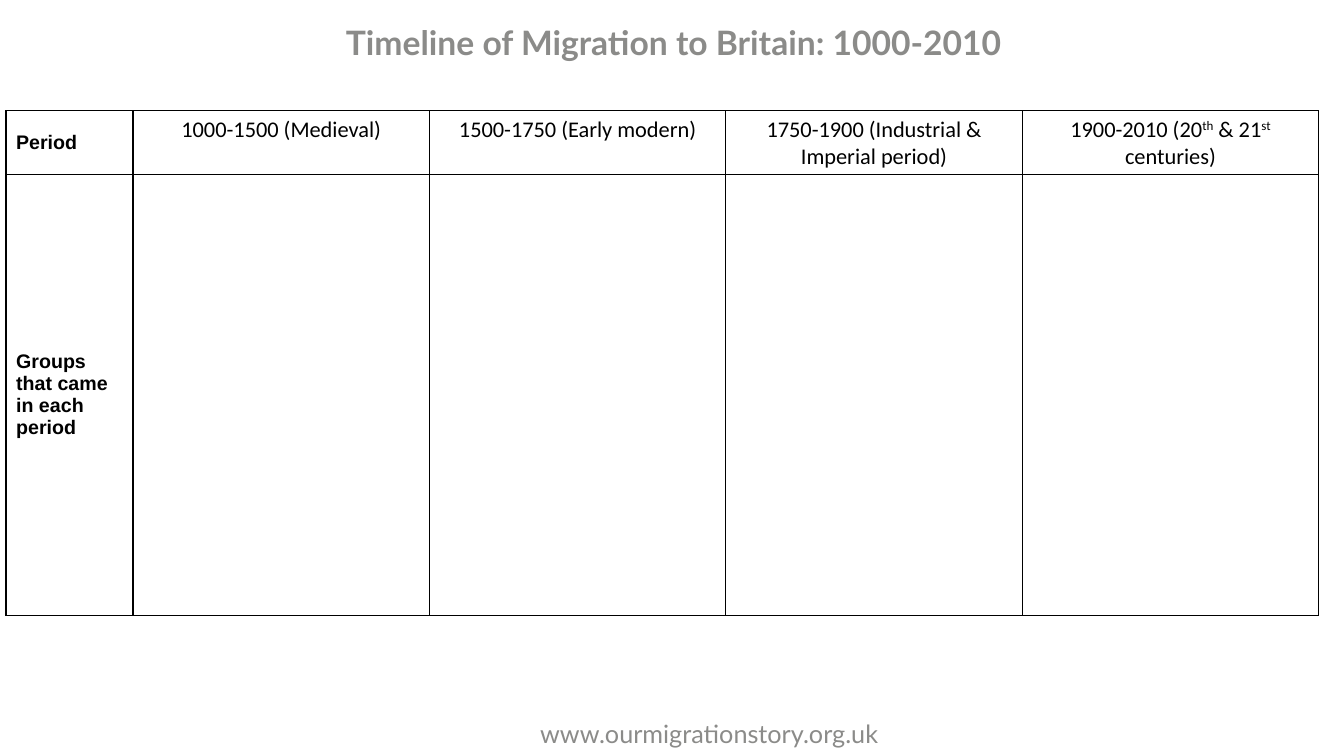
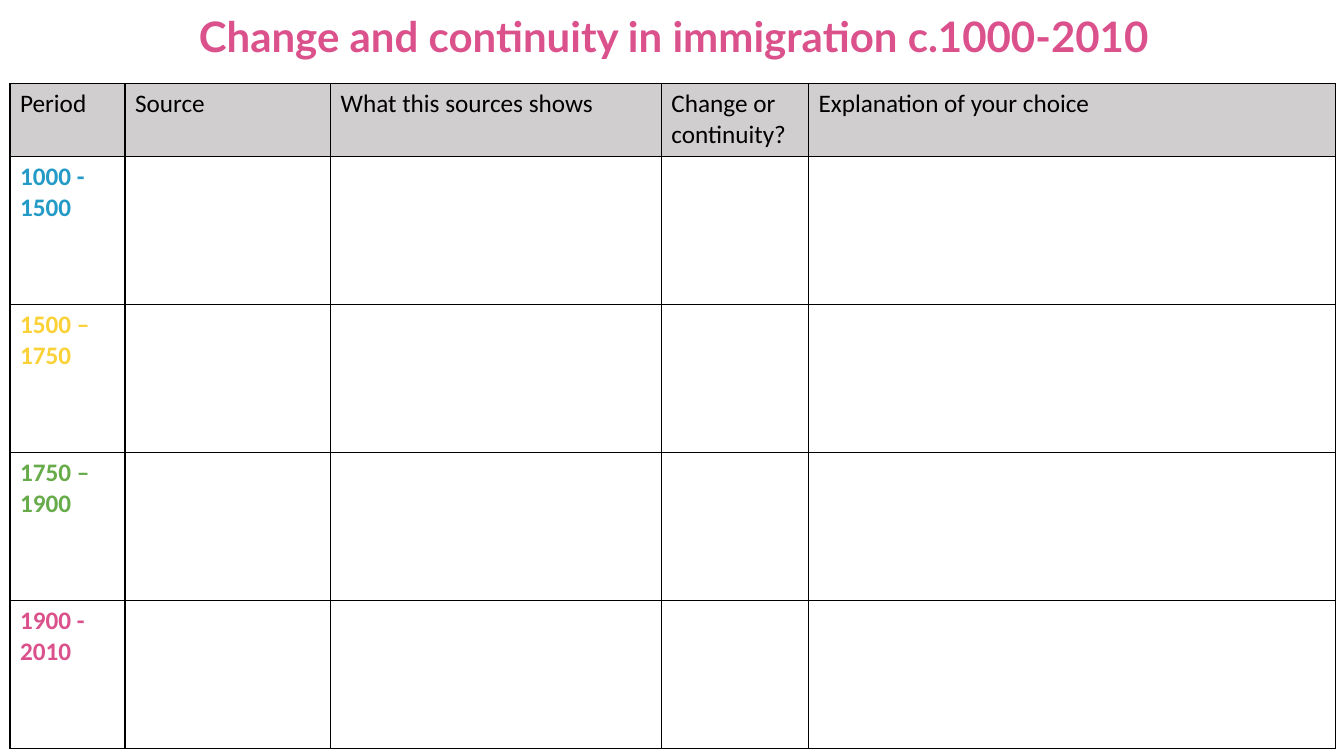
"""Build two worksheet slides on migration to Britain: a timeline and a source grid."""
from lxml import etree
from pptx import Presentation
from pptx.dml.color import RGBColor
from pptx.enum.text import MSO_ANCHOR, MSO_AUTO_SIZE, PP_ALIGN
from pptx.oxml.ns import qn
from pptx.util import Emu, Pt

LEFT, CENTER = PP_ALIGN.LEFT, PP_ALIGN.CENTER
TOP, MIDDLE = MSO_ANCHOR.TOP, MSO_ANCHOR.MIDDLE
NO_AUTOFIT = MSO_AUTO_SIZE.NONE
TITLE_ONLY = 5
PX = 9144
BORDER_WIDTH = 12700

THEME = {
    "black": "000000", "white": "FFFFFF", "header": "D0CECE", "grey": "8B8B89",
    "blue": "249BC6", "yellow": "FAD238", "green": "67AB4A", "pink": "DB518C",
    "brand_font": "Lato", "body_font": "Calibri", "label_font": "Arial",
    "timeline_title": 24, "grid_title": 30, "body": 18, "period": 16, "label": 14,
}


def text_format(font, size, color, bold=False):
    """Return font settings looked up in the theme."""
    return {"name": THEME[font], "size": Pt(THEME[size]), "bold": bold,
            "color": RGBColor.from_string(THEME[color])}


def write(paragraph, text, settings, alignment=LEFT):
    """Write text into a paragraph, raising the parts between carets."""
    paragraph.alignment = alignment
    for index, part in enumerate(text.split("^")):
        run = paragraph.add_run()
        run.text = part
        for name, value in settings.items():
            if name == "color":
                run.font.color.rgb = value
            else:
                setattr(run.font, name, value)
        if index % 2:
            run._r.get_or_add_rPr().set("baseline", "30000")


footer_format = text_format("brand_font", "body", "grey")
label_format = text_format("label_font", "label", "black", True)
period_format = text_format("body_font", "period", "black")
heading_format = text_format("body_font", "body", "black")

timeline_periods = ["1000-1500 (Medieval)", "1500-1750 (Early modern)",
                    "1750-1900 (Industrial & Imperial period)",
                    "1900-2010 (20^th^ & 21^st^ centuries)"]
grid_headings = ["Period", "Source", "What this sources shows",
                 "Change or continuity?", "Explanation of your choice"]
grid_periods = [("1000 - 1500", "blue"), ("1500 – 1750", "yellow"),
                ("1750 – 1900", "green"), ("1900 - 2010", "pink")]

timeline_cells = {(row, 0): (text, label_format, LEFT, MIDDLE)
                  for row, text in enumerate(["Period", "Groups that came in each period"])}
for column, text in enumerate(timeline_periods, 1):
    timeline_cells[0, column] = (text, period_format, CENTER, TOP)

grid_cells = {(0, column): (text, heading_format, LEFT, TOP)
              for column, text in enumerate(grid_headings)}
for row, (text, color) in enumerate(grid_periods, 1):
    grid_cells[row, 0] = (text, text_format("body_font", "body", color, True), LEFT, TOP)

slides = [
    {"title": "Timeline of Migration to Britain: 1000-2010",
     "title_format": text_format("brand_font", "timeline_title", "grey", True),
     "title_box": (276, 17, 784, 50), "table_at": (6, 110),
     "columns": [126] + [294] * 4, "rows": [63, 437],
     "header": "white", "cells": timeline_cells},
    {"title": "Change and continuity in immigration c.1000-2010",
     "title_format": text_format("brand_font", "grid_title", "pink", True),
     "title_box": (108, 5, 1121, 61), "table_at": (10, 83),
     "columns": [114, 204, 328, 146, 523], "rows": [72] + [147] * 4,
     "header": "header", "cells": grid_cells},
]

presentation = Presentation()
presentation.slide_width, presentation.slide_height = Emu(1333 * PX), Emu(750 * PX)

for content in slides:
    slide = presentation.slides.add_slide(presentation.slide_layouts[TITLE_ONLY])

    title = slide.shapes.title
    for side, length in zip(("left", "top", "width", "height"), content["title_box"]):
        setattr(title, side, Emu(length * PX))
    frame_format = {"word_wrap": True, "auto_size": NO_AUTOFIT, "vertical_anchor": TOP}
    for name, value in frame_format.items():
        setattr(title.text_frame, name, value)
    write(title.text_frame.paragraphs[0], content["title"], content["title_format"], CENTER)

    footer = slide.shapes.add_textbox(*(Emu(n * PX) for n in (526, 708, 360, 40)))
    footer.text_frame.word_wrap = True
    write(footer.text_frame.paragraphs[0], "www.ourmigrationstory.org.uk", footer_format)

    columns, rows = content["columns"], content["rows"]
    table_box = (*content["table_at"], sum(columns), sum(rows))
    table = slide.shapes.add_table(len(rows), len(columns),
                                   *(Emu(n * PX) for n in table_box)).table
    table.first_row = table.horz_banding = False
    for column, width in zip(table.columns, columns):
        column.width = Emu(width * PX)
    for row_index, height in enumerate(rows):
        table.rows[row_index].height = Emu(height * PX)
        fill = THEME["white" if row_index else content["header"]]
        for column_index in range(len(columns)):
            cell = table.cell(row_index, column_index)
            cell.fill.solid()
            cell.fill.fore_color.rgb = RGBColor.from_string(fill)
            properties = cell._tc.get_or_add_tcPr()
            for position, edge in enumerate(("a:lnL", "a:lnR", "a:lnT", "a:lnB")):
                border = etree.Element(qn(edge), w=str(BORDER_WIDTH))
                solid = etree.SubElement(border, qn("a:solidFill"))
                etree.SubElement(solid, qn("a:srgbClr"), val=THEME["black"])
                properties.insert(position, border)
            if (row_index, column_index) in content["cells"]:
                text, settings, alignment, anchor = content["cells"][row_index, column_index]
                cell.vertical_anchor = anchor
                write(cell.text_frame.paragraphs[0], text, settings, alignment)

presentation.save("out.pptx")
